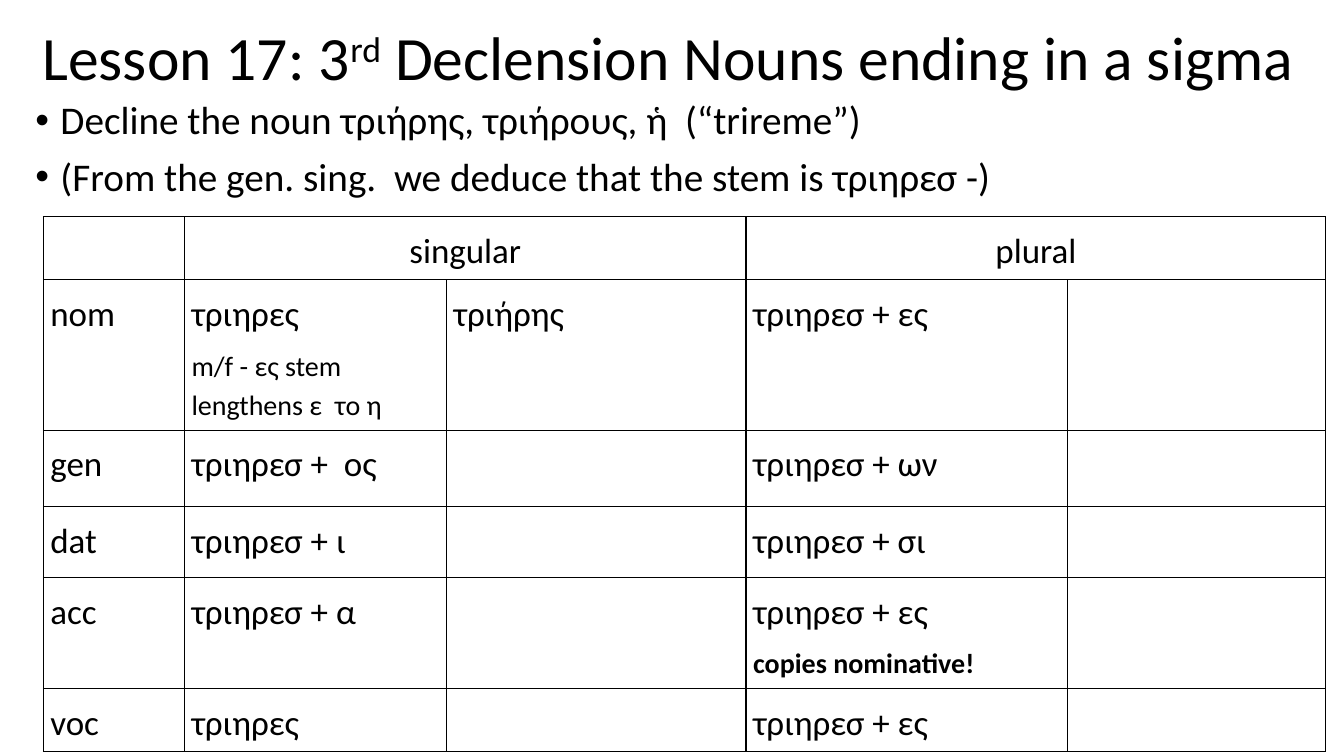
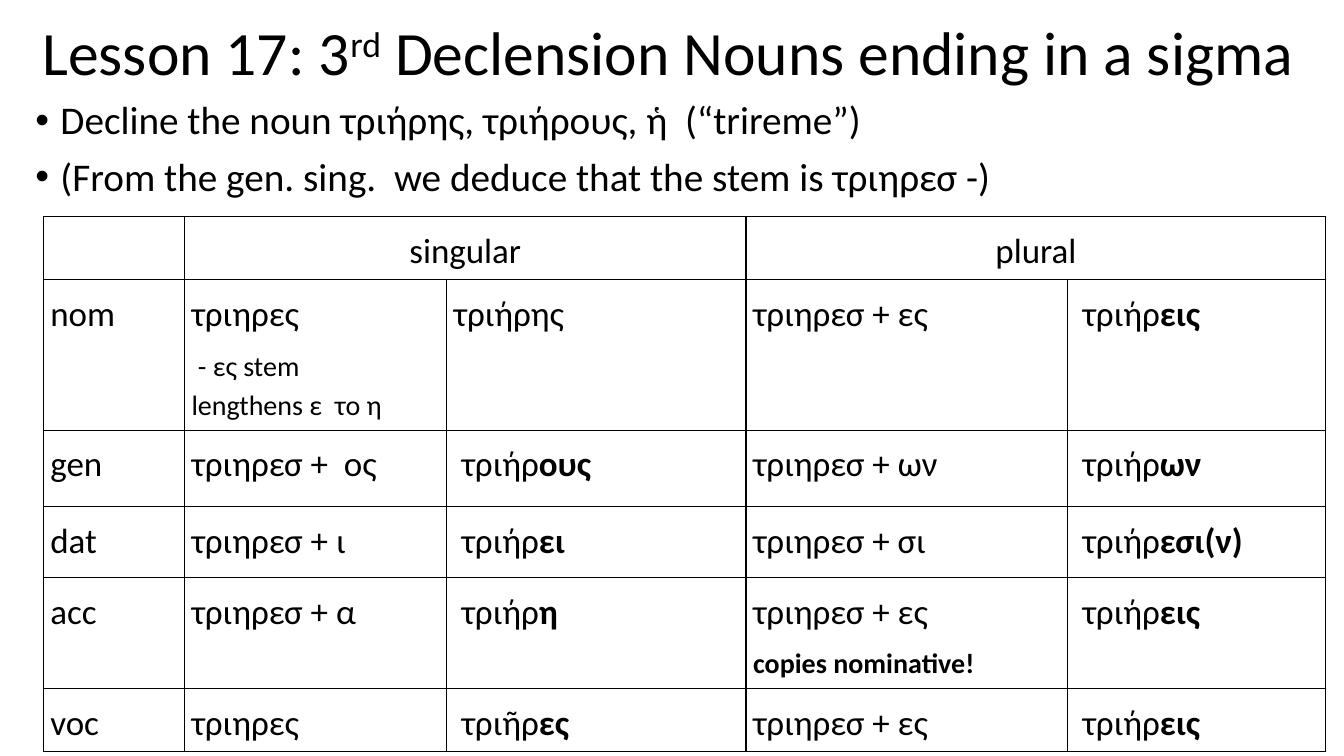
from pptx import Presentation
from pptx.dml.color import RGBColor
from pptx.enum.text import MSO_ANCHOR, MSO_AUTO_SIZE, PP_ALIGN
from pptx.oxml.ns import qn
from pptx.util import Inches, Pt
from lxml.etree import SubElement

FONT = "Calibri"
BLACK = "000000"
TITLE = ["Lesson 17: 3", "rd", " Declension Nouns ending in a sigma"]
BULLETS = [
    "Decline the noun τριήρης, τριήρους, ἡ  (“trireme”)",
    "(From the gen. sing.  we deduce that the stem is τριηρεσ -)",
]
COLUMN_WIDTHS = [1.4, 2.6, 2.97, 3.19, 2.56]
ROW_HEIGHTS = [0.49, 1.04, 0.76, 0.7, 1.04, 0.49]

# Stem columns: "\n" starts a smaller note. Form columns: "|" starts the bold ending.
STEMS = [
    ("nom", "τριηρες\n{} - ες stem \vlengthens ε  το η", "τριηρεσ + ες"),
    ("gen", "τριηρεσ +  ος", "τριηρεσ + ων"),
    ("dat", "τριηρεσ + ι", "τριηρεσ + σι"),
    ("acc", "τριηρεσ + α", "τριηρεσ + ες\ncopies nominative!"),
    ("voc", "τριηρες", "τριηρεσ + ες"),
]
QUESTION_FORMS = [("τριήρης", "")] + [("", "")] * 4
ANSWER_FORMS = [
    ("τριήρης", " τριήρ|εις"),
    (" τριήρ|ους", " τριήρ|ων"),
    (" τριήρ|ει", " τριήρ|εσι(ν)"),
    (" τριήρ|η", " τριήρ|εις"),
    (" τριῆρ|ες", " τριήρ|εις"),
]
# Top of the title, gender in the nominative note, declined forms
PAGES = [(-0.12, "m/f", QUESTION_FORMS), (-0.17, "", ANSWER_FORMS)]


def style(span, size, bold=False):
    span.font.name = FONT
    span.font.size = Pt(size)
    span.font.bold = bold
    span.font.color.rgb = RGBColor.from_string(BLACK)


def write_cell(cell, text, align=PP_ALIGN.LEFT):
    """Fill a bordered cell; a second paragraph is a note, text after | is bold."""
    cell.margin_left = cell.margin_right = Inches(0.07)
    cell.margin_top = cell.margin_bottom = Inches(0.07)
    cell_props = cell._tc.get_or_add_tcPr()
    for side in ("lnL", "lnR", "lnT", "lnB"):
        border = SubElement(cell_props, qn(f"a:{side}"), w=str(Pt(1)))
        fill = SubElement(border, qn("a:solidFill"))
        SubElement(fill, qn("a:srgbClr"), val=BLACK)
    cell.fill.background()

    stem, _, ending = text.partition("|")
    cell.text_frame.text = stem
    for number, para in enumerate(cell.text_frame.paragraphs):
        para.alignment = align
        para.line_spacing = 1.15
        para.space_after = Pt(6)
        for span in para.runs:
            style(span, 20 if number else 25, span.text.startswith("copies"))
    if ending:
        span = para.add_run()
        span.text = ending
        style(span, 25, bold=True)


deck = Presentation()
deck.slide_width, deck.slide_height = Inches(13.33), Inches(7.5)

for title_top, gender, forms in PAGES:
    page = deck.slides.add_slide(deck.slide_layouts[1])
    title, body = page.shapes.title, page.placeholders[1]

    title.left, title.top = Inches(0.32), Inches(title_top)
    title.width, title.height = Inches(13.02), Inches(1.45)
    title.text_frame.auto_size = MSO_AUTO_SIZE.NONE
    title.text_frame.vertical_anchor = MSO_ANCHOR.MIDDLE
    para = title.text_frame.paragraphs[0]
    para.alignment = PP_ALIGN.LEFT
    para.line_spacing = 0.9
    for text in TITLE:
        span = para.add_run()
        span.text = text
        style(span, 44)
    para.runs[1]._r.get_or_add_rPr().set("baseline", "30000")

    body.left, body.top = Inches(0.25), Inches(0.95)
    body.width, body.height = Inches(12.76), Inches(1.45)
    body.text_frame.text = "\n".join(BULLETS)
    body.text_frame.auto_size = MSO_AUTO_SIZE.NONE
    for para in body.text_frame.paragraphs:
        para.line_spacing = 0.9
        para.space_before = Pt(10)
        para_props = para._p.get_or_add_pPr()
        para_props.set("marL", str(Inches(0.25)))
        para_props.set("indent", str(Inches(-0.25)))
        style(para.runs[0], 28)

    frame = page.shapes.add_table(
        len(ROW_HEIGHTS), len(COLUMN_WIDTHS), Inches(0.43), Inches(2.15),
        Inches(sum(COLUMN_WIDTHS)), Inches(sum(ROW_HEIGHTS)))
    table = frame.table
    table.first_row = table.horz_banding = False
    for column, width in zip(table.columns, COLUMN_WIDTHS):
        column.width = Inches(width)
    for row, height in zip(table.rows, ROW_HEIGHTS):
        row.height = Inches(height)

    for column, text in enumerate(["", "singular", "", "plural", ""]):
        write_cell(table.cell(0, column), text, PP_ALIGN.CENTER)
    for column in (1, 3):
        table.cell(0, column).merge(table.cell(0, column + 1))

    for row, (stems, declined) in enumerate(zip(STEMS, forms), start=1):
        case, singular, plural = stems
        texts = [case, singular.format(gender), declined[0], plural, declined[1]]
        for column, text in enumerate(texts):
            write_cell(table.cell(row, column), text)

deck.save("out.pptx")
